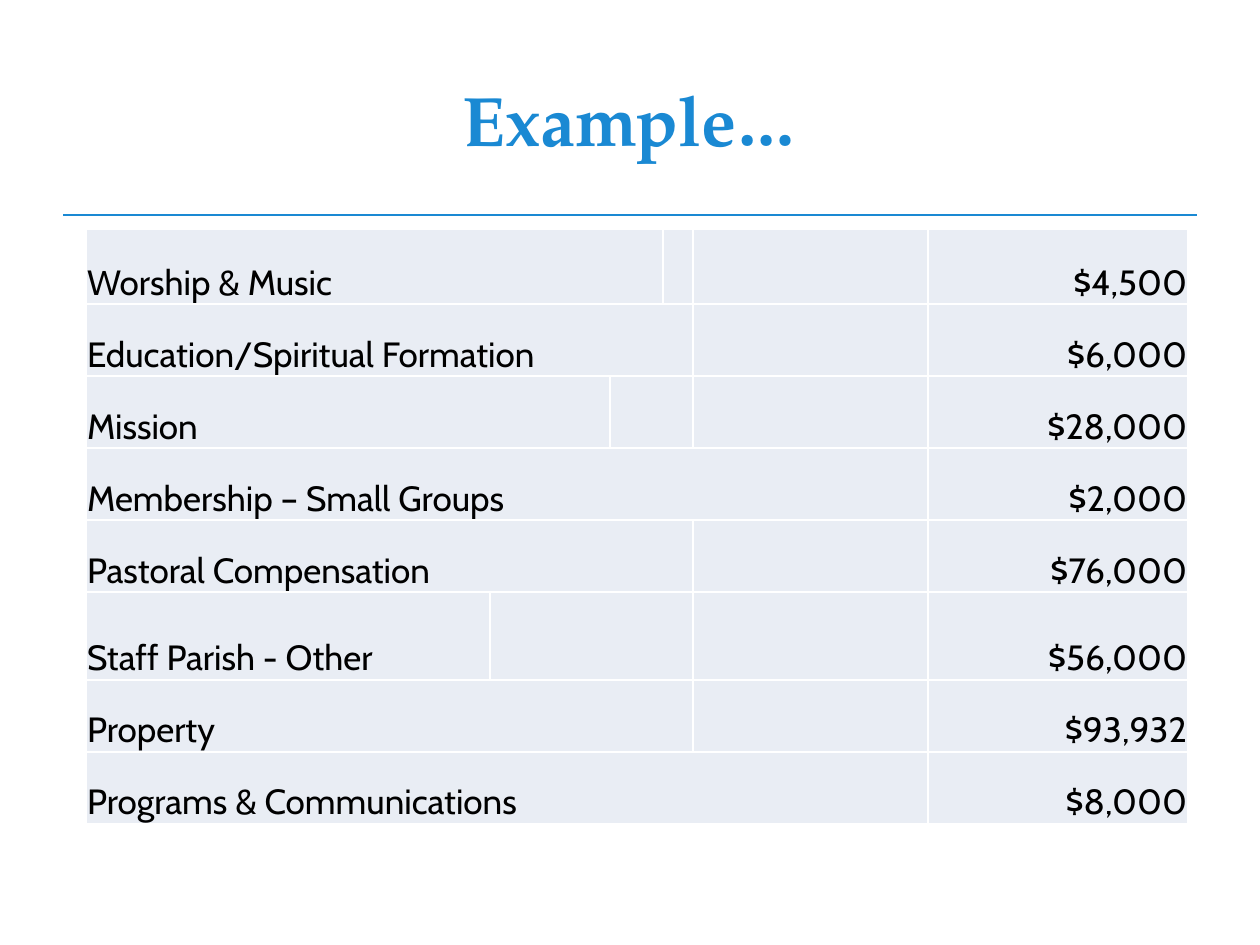
"""Build the budget example slide with its ruled title and expense table."""
import dataclasses

import lxml.etree
import pptx
import pptx.dml.color
import pptx.enum.shapes
import pptx.enum.text
import pptx.oxml.ns
import pptx.util

ALIGN = pptx.enum.text.PP_ALIGN
ANCHOR = pptx.enum.text.MSO_ANCHOR
qn = pptx.oxml.ns.qn


@dataclasses.dataclass(frozen=True)
class Theme:
    accent: str = "1A89D3"
    ink: str = "000000"
    cell: str = "E9EDF4"
    border: str = "FFFFFF"
    title_font: str = "TeX Gyre Pagella"
    body_font: str = "Cabin"
    title_size: int = 40
    body_size: int = 20
    rule_width: float = 1.5
    border_width: int = 1


def px(n):
    return pptx.util.Emu(round(n * 914400 / 126))


def rgb(color):
    return pptx.dml.color.RGBColor.from_string(color)


class Deck:
    def __init__(self, theme, width, height):
        self.theme = theme
        self.prs = pptx.Presentation()
        self.prs.slide_width, self.prs.slide_height = px(width), px(height)
        self.s = self.prs.slides.add_slide(self.prs.slide_layouts[6])

    def set_text(self, tf, text, font, size, color, align, bold=False):
        tf.text = text
        p = tf.paragraphs[0]
        p.alignment = align
        f = p.runs[0].font
        f.name, f.size, f.bold = font, pptx.util.Pt(size), bold
        f.color.rgb = rgb(color)

    def title(self, text, x, y, w, h):
        t = self.theme
        tf = self.s.shapes.add_textbox(px(x), px(y), px(w), px(h)).text_frame
        tf.word_wrap = True
        tf.vertical_anchor = ANCHOR.MIDDLE
        self.set_text(tf, text, t.title_font, t.title_size, t.accent, ALIGN.CENTER, True)

    def rule(self, x1, x2, y):
        sp = self.s.shapes.add_connector(
            pptx.enum.shapes.MSO_CONNECTOR.STRAIGHT, px(x1), px(y), px(x2), px(y))
        sp.line.color.rgb = rgb(self.theme.accent)
        sp.line.width = pptx.util.Pt(self.theme.rule_width)
        lxml.etree.SubElement(sp._element.spPr, qn("a:effectLst"))

    def style_cell(self, cell):
        tcPr = cell._tc.get_or_add_tcPr()
        width = str(pptx.util.Pt(self.theme.border_width))
        for side in ("lnL", "lnR", "lnT", "lnB"):
            ln = lxml.etree.SubElement(tcPr, qn("a:" + side), w=width)
            fill = lxml.etree.SubElement(ln, qn("a:solidFill"))
            lxml.etree.SubElement(fill, qn("a:srgbClr"), val=self.theme.border)
        cell.fill.solid()
        cell.fill.fore_color.rgb = rgb(self.theme.cell)

    def cell_text(self, cell, text, align):
        t = self.theme
        cell.margin_left = cell.margin_right = cell.margin_top = px(1)
        cell.margin_bottom = 0
        cell.vertical_anchor = ANCHOR.BOTTOM
        self.set_text(cell.text_frame, text, t.body_font, t.body_size, t.ink, align)

    def table(self, x, y, cols, heights, rows):
        tbl = self.s.shapes.add_table(
            len(rows), len(cols), px(x), px(y), px(sum(cols)), px(sum(heights))).table
        tbl.first_row = tbl.horz_banding = False
        for col, w in zip(tbl.columns, cols):
            col.width = px(w)
        for row, h in zip(tbl.rows, heights):
            row.height = px(h)
        for cell in tbl.iter_cells():
            self.style_cell(cell)
        for i, (label, amount, spans) in enumerate(rows):
            start = 0
            for span in spans:
                if span > 1:
                    tbl.cell(i, start).merge(tbl.cell(i, start + span - 1))
                start += span
            self.cell_text(tbl.cell(i, 0), label, ALIGN.LEFT)
            self.cell_text(tbl.cell(i, len(cols) - 1), amount, ALIGN.RIGHT)


def main():
    deck = Deck(Theme(), 1260, 945)
    deck.rule(63, 1197, 215)
    deck.title("Example…", 63, 63, 1134, 111)
    budget = [
        ("Worship & Music", "$4,500", (3, 1, 1, 1)),
        ("Education/Spiritual Formation", "$6,000", (4, 1, 1)),
        ("Mission", "$28,000", (2, 2, 1, 1)),
        ("Membership – Small Groups", "$2,000", (5, 1)),
        ("Pastoral Compensation", "$76,000", (4, 1, 1)),
        ("Staff Parish - Other", "$56,000", (1, 3, 1, 1)),
        ("Property", "$93,932", (4, 1, 1)),
        ("Programs & Communications", "$8,000", (5, 1)),
    ]
    heights = [75] + [72] * 4 + [88] + [72] * 2
    deck.table(86, 229, [404, 120, 53, 11, 235, 260], heights, budget)
    deck.prs.save("out.pptx")


if __name__ == "__main__":
    main()
